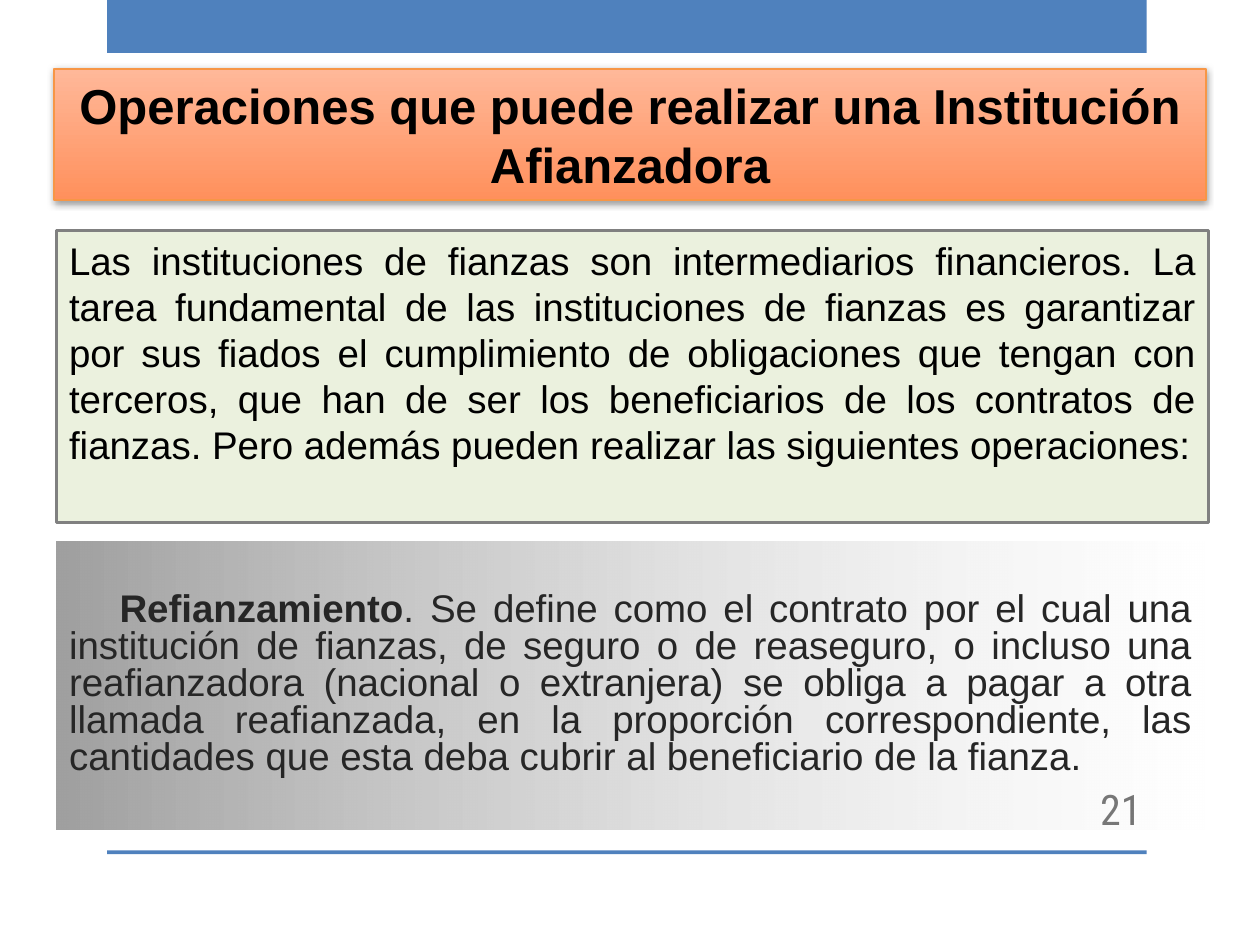
from lxml.etree import SubElement
from pptx import Presentation
from pptx.dml.color import RGBColor
from pptx.enum.shapes import MSO_SHAPE as Shape
from pptx.enum.text import MSO_ANCHOR as Anchor, MSO_AUTO_SIZE as AutoSize, PP_ALIGN as Align
from pptx.oxml.ns import qn
from pptx.util import Inches, Pt

WIDTH, HEIGHT = 10, 7.5
MARGIN = 0.45
PANEL_WIDTH = 9.14
BAND_LEFT, BAND_WIDTH = 0.85, 8.25

TITLE = [("Operaciones que puede realizar una Institución Afianzadora", True)]
INTRO = [("Las instituciones de fianzas son intermediarios financieros. La tarea fundamental "
          "de las instituciones de fianzas es garantizar por sus fiados el cumplimiento de "
          "obligaciones que tengan con terceros, que han de ser los beneficiarios de los "
          "contratos de fianzas. Pero además pueden realizar las siguientes operaciones:", False)]
DEFINITION = [("Refianzamiento", True),
              (". Se define como el contrato por el cual una institución de fianzas, de seguro "
               "o de reaseguro, o incluso una reafianzadora (nacional o extranjera) se obliga a "
               "pagar a otra llamada reafianzada, en la proporción correspondiente, las "
               "cantidades que esta deba cubrir al beneficiario de la fianza.", False)]
PAGE_NUMBER = [("21", False)]
BANDS = [(0, 0.42), (6.75, 0.03)]


def color(value):
    return RGBColor.from_string(value)


def place(shape, left, top, width, height):
    shape.left, shape.top = Inches(left), Inches(top)
    shape.width, shape.height = Inches(width), Inches(height)


def add_box(page, left, top, width, height):
    box = page.shapes.add_shape(Shape.RECTANGLE, *map(Inches, (left, top, width, height)))
    box.shadow.inherit = False
    box.line.fill.background()
    return box


def fill_solid(shape, value):
    shape.fill.solid()
    shape.fill.fore_color.rgb = color(value)


def fill_gradient(shape, values, angle):
    shape.fill.gradient()
    shape.fill.gradient_angle = angle
    stops = shape.fill.gradient_stops
    for stop, value, position in zip(stops, values, (0, 1)):
        stop.color.rgb = color(value)
        stop.position = position


def outline(shape, value, width):
    shape.line.color.rgb = color(value)
    shape.line.width = Pt(width)


def add_shadow(shape):
    shape.shadow.inherit = False
    effects = shape._element.spPr.find(qn("a:effectLst"))
    shadow = SubElement(effects, qn("a:outerShdw"), blurRad=str(Pt(4)), dist=str(Pt(1)),
                        dir=str(88 * 60000), rotWithShape="0")
    tint = SubElement(shadow, qn("a:srgbClr"), val="000000")
    SubElement(tint, qn("a:alpha"), val="40000")


def write(shape, spans, size, align, anchor, value="000000", font="Arial"):
    frame = shape.text_frame
    frame.word_wrap = True
    frame.auto_size = AutoSize.NONE
    frame.vertical_anchor = anchor
    para = frame.paragraphs[0]
    para.alignment = align
    for text, bold in spans:
        span = para.add_run()
        span.text = text
        span.font.name = font
        span.font.size = Pt(size)
        span.font.bold = bold
        span.font.color.rgb = color(value)
    return para


def main():
    deck = Presentation()
    deck.slide_width, deck.slide_height = Inches(WIDTH), Inches(HEIGHT)
    page = deck.slides.add_slide(deck.slide_layouts[5])

    title = page.shapes.title
    place(title, 0.43, 0.55, PANEL_WIDTH, 1.04)
    fill_gradient(title, ("FFB899", "FF905C"), 270)
    outline(title, "F79646", 1.25)
    add_shadow(title)
    write(title, TITLE, 28, Align.CENTER, Anchor.TOP)

    for top, height in BANDS:
        fill_solid(add_box(page, BAND_LEFT, top, BAND_WIDTH, height), "4F81BD")

    intro = add_box(page, MARGIN, 1.83, PANEL_WIDTH, 2.32)
    fill_solid(intro, "EBF1DE")
    outline(intro, "808080", 1.75)
    write(intro, INTRO, 22, Align.JUSTIFY, Anchor.TOP)

    number = page.shapes.add_textbox(*map(Inches, (8.33, 6.22, 0.83, 0.4)))
    write(number, PAGE_NUMBER, 24, Align.RIGHT, Anchor.MIDDLE, font="Roboto Condensed")

    definition = add_box(page, MARGIN, 4.3, 9.11, 2.28)
    fill_gradient(definition, ("A0A0A0", "FFFFFF"), 0)
    last_color = definition._element.spPr.findall(".//" + qn("a:srgbClr"))[-1]
    SubElement(last_color, qn("a:alpha"), val="44000")
    para = write(definition, DEFINITION, 22, Align.JUSTIFY, Anchor.MIDDLE, "262626")
    para.line_spacing = 0.8
    para.space_before = Pt(4.4)
    para._p.get_or_add_pPr().set("indent", str(Inches(0.4)))

    deck.save("out.pptx")


if __name__ == "__main__":
    main()
